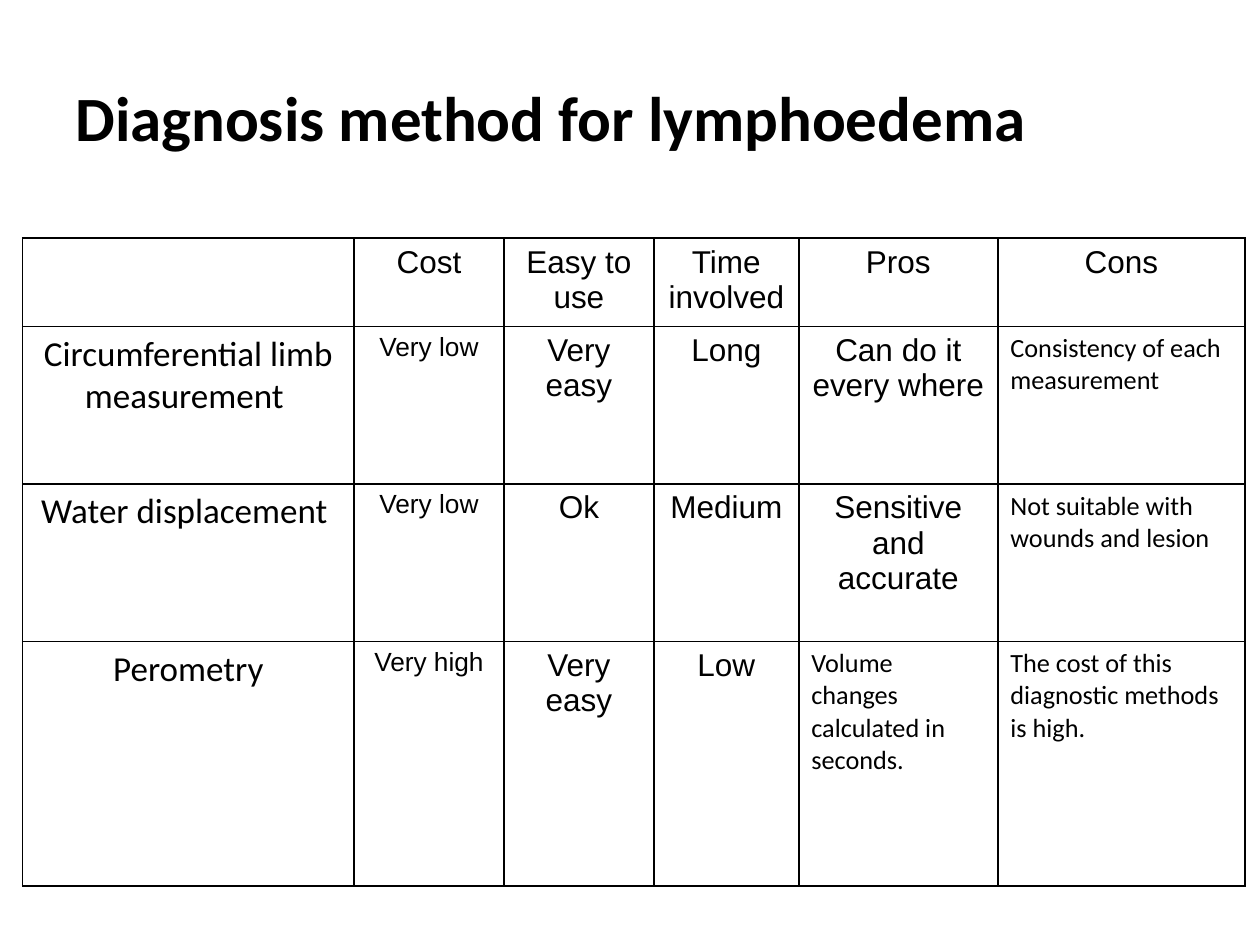
from dataclasses import dataclass

import pptx
import pptx.dml.color
import pptx.enum.text
import pptx.oxml
import pptx.oxml.ns
import pptx.util

Inches = pptx.util.Inches
ALIGN = pptx.enum.text.PP_ALIGN
ANCHOR = pptx.enum.text.MSO_ANCHOR


@dataclass(frozen=True)
class Theme:
    ink: str = "000000"
    paper: str = "FFFFFF"
    head_font: str = "Calibri"
    body_font: str = "Arial"
    title_size: int = 36
    method_size: int = 20
    body_size: int = 18
    small_size: int = 15
    border_width: int = 1


THEME = Theme()
# Each format: font name, size, alignment
BODY = (THEME.body_font, THEME.body_size, ALIGN.CENTER)
RATING = (THEME.body_font, THEME.small_size, ALIGN.CENTER)
METHOD = (THEME.head_font, THEME.method_size, ALIGN.CENTER)
REMARK = (THEME.head_font, THEME.small_size, ALIGN.LEFT)

COLUMN_WIDTHS = (2.63, 1.19, 1.19, 1.15, 1.58, 1.96)
ROW_HEIGHTS = (0.66, 1.25, 1.25, 1.94)
HEADINGS = ("", "Cost", "Easy to use", "Time involved", "Pros", "Cons")
METHODS = (
    ("Circumferential limb measurement ", "Very low", "Very easy", "Long",
     "Can do it every where", "Consistency of each measurement"),
    ("Water displacement ", "Very low", "Ok", "Medium",
     "Sensitive and accurate", "Not suitable with wounds and lesion"),
    ("Perometry", "Very high", "Very easy", "Low",
     "Volume changes calculated in seconds.",
     "The cost of this diagnostic methods is high."),
)
HEADING_FORMATS = (BODY,) * len(HEADINGS)
METHOD_FORMATS = (METHOD, RATING, BODY, BODY, BODY, REMARK)
LAST_FORMATS = (METHOD, RATING, BODY, BODY, REMARK, REMARK)


class PageBuilder:
    def __init__(self, page, theme):
        self.page = page
        self.theme = theme

    def add_text(self, frame, text, font, size, align, bold=False):
        para = frame.paragraphs[0]
        para.alignment = align
        span = para.add_run()
        span.text = text
        values = {"name": font, "size": pptx.util.Pt(size), "bold": bold}
        for name, value in values.items():
            setattr(span.font, name, value)
        span.font.color.rgb = pptx.dml.color.RGBColor.from_string(self.theme.ink)

    def title(self, text, left, top, width, height):
        box = self.page.shapes.add_textbox(
            *map(Inches, (left, top, width, height)))
        frame = box.text_frame
        values = {"word_wrap": True, "vertical_anchor": ANCHOR.MIDDLE,
                  "margin_top": Inches(0.04), "margin_bottom": Inches(0.05)}
        for name, value in values.items():
            setattr(frame, name, value)
        self.add_text(frame, text, self.theme.head_font, self.theme.title_size,
                      ALIGN.JUSTIFY, bold=True)

    def border(self, cell):
        properties = cell._tc.get_or_add_tcPr()
        width = pptx.util.Pt(self.theme.border_width)
        for side in ("lnL", "lnR", "lnT", "lnB"):
            properties.append(pptx.oxml.parse_xml(
                f'<a:{side} {pptx.oxml.ns.nsdecls("a")} w="{width}">'
                f'<a:solidFill><a:srgbClr val="{self.theme.ink}"/></a:solidFill>'
                f'</a:{side}>'))

    def table(self, rows, formats, left, top, widths, heights):
        table = self.page.shapes.add_table(
            len(heights), len(widths), Inches(left), Inches(top),
            Inches(sum(widths)), Inches(sum(heights))).table
        table.first_row = table.horz_banding = False
        for column, width in zip(table.columns, widths):
            column.width = Inches(width)
        for row, height, texts, styles in zip(table.rows, heights, rows, formats):
            row.height = Inches(height)
            for cell, text, style in zip(row.cells, texts, styles):
                self.border(cell)
                cell.fill.solid()
                cell.fill.fore_color.rgb = pptx.dml.color.RGBColor.from_string(
                    self.theme.paper)
                if text:
                    self.add_text(cell.text_frame, text, *style)


def main():
    deck = pptx.Presentation()
    deck.slide_width, deck.slide_height = Inches(10), Inches(7.5)
    page = deck.slides.add_slide(deck.slide_layouts[6])
    builder = PageBuilder(page, THEME)
    builder.title("Diagnosis method for lymphoedema", 0.5, 0.3, 9, 1.25)
    builder.table(
        (HEADINGS, *METHODS),
        (HEADING_FORMATS, METHOD_FORMATS, METHOD_FORMATS, LAST_FORMATS),
        0.18, 1.89, COLUMN_WIDTHS, ROW_HEIGHTS)
    deck.save("out.pptx")


if __name__ == "__main__":
    main()
